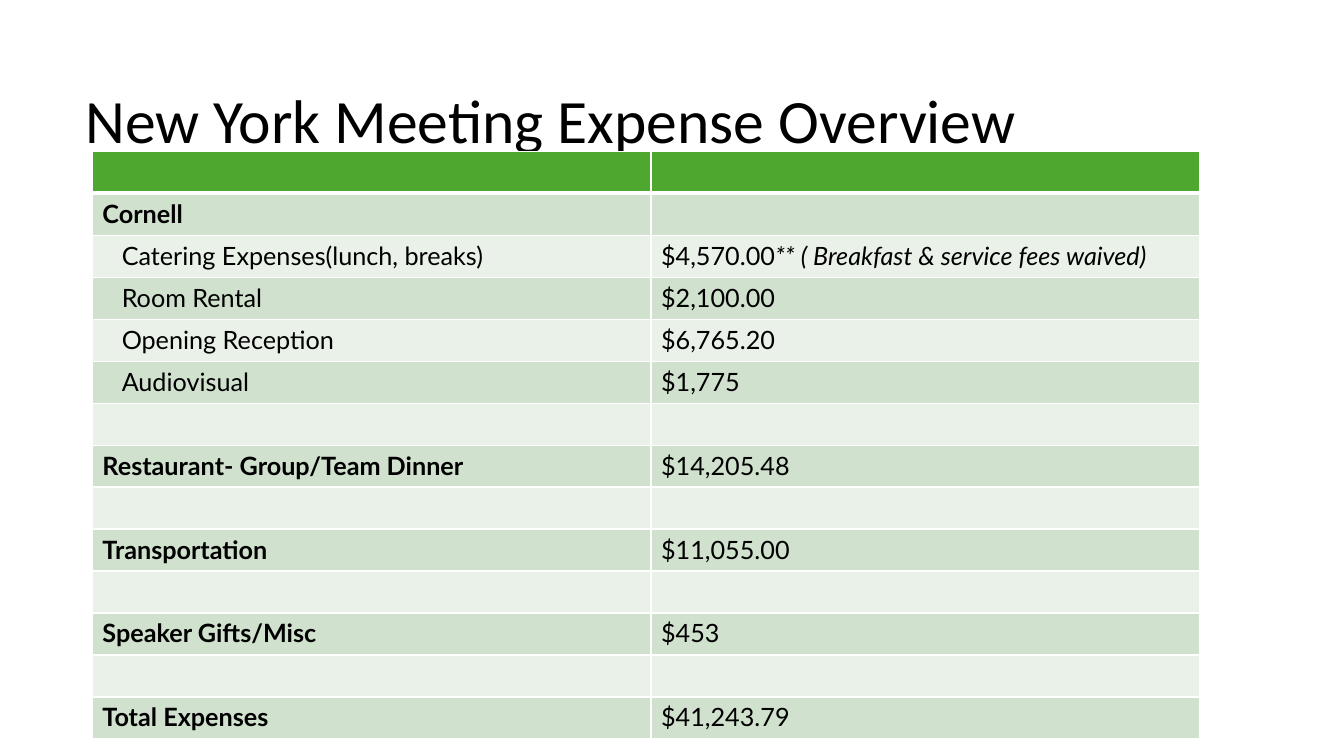
import dataclasses

import pptx
import pptx.dml.color
import pptx.enum.text
import pptx.oxml
import pptx.oxml.ns
import pptx.util

PX = 9525  # EMU in one px, 96 px to the inch


@dataclasses.dataclass(frozen=True)
class Theme:
    ink: str = "000000"
    rule: str = "FFFFFF"
    head: str = "4EA72E"
    bands: tuple = ("D0E1CD", "E9F1E8")
    title: int = 44
    body: int = 18
    title_font: str = "Calibri"
    body_font: str = "Lato"


THEME = Theme()

# Label, level (0 = bold group, 1 = indented item), amount, note
ROWS = [
    ("", 0, "", ""),
    ("Cornell", 0, "", ""),
    ("Catering Expenses(lunch, breaks)", 1, "$4,570.00",
     "** ( Breakfast & service fees waived)"),
    ("Room Rental", 1, "$2,100.00", ""),
    ("Opening Reception", 1, "$6,765.20", ""),
    ("Audiovisual", 1, "$1,775", ""),
    ("", 0, "", ""),
    ("Restaurant- Group/Team Dinner", 0, "$14,205.48", ""),
    ("", 0, "", ""),
    ("Transportation", 0, "$11,055.00", ""),
    ("", 0, "", ""),
    ("Speaker Gifts/Misc", 0, "$453", ""),
    ("", 0, "", ""),
    ("Total Expenses", 0, "$41,243.79", ""),
]


def px(num):
    return pptx.util.Emu(num * PX)


def color(code):
    return pptx.dml.color.RGBColor.from_string(code)


def add_run(para, text, size, font, bold=False, slant=False):
    run = para.add_run()
    run.text = text
    run.font.size = pptx.util.Pt(size)
    run.font.name = font
    run.font.bold = bold
    run.font.italic = slant
    run.font.color.rgb = color(THEME.ink)


def add_title(slide, text, left, top, width, height):
    box = slide.shapes.add_textbox(px(left), px(top), px(width), px(height))
    frame = box.text_frame
    frame.word_wrap = True
    frame.margin_top = px(7)
    frame.vertical_anchor = pptx.enum.text.MSO_ANCHOR.TOP
    add_run(frame.paragraphs[0], text, THEME.title, THEME.title_font)


def add_rules(cell, top, bottom):
    props = cell._tc.get_or_add_tcPr()
    space = pptx.oxml.ns.nsdecls("a")
    for side, points in (("L", 1), ("R", 1), ("T", top), ("B", bottom)):
        props.append(pptx.oxml.parse_xml(
            f'<a:ln{side} {space} w="{pptx.util.Pt(points)}"><a:solidFill>'
            f'<a:srgbClr val="{THEME.rule}"/></a:solidFill></a:ln{side}>'))


def fill_cell(cell, row, runs):
    # The rule under the header row is heavier
    add_rules(cell, 3 if row == 1 else 1, 3 if row == 0 else 1)
    cell.fill.solid()
    band = THEME.bands[(row - 1) % 2]
    cell.fill.fore_color.rgb = color(band if row else THEME.head)
    para = cell.text_frame.paragraphs[0]
    para.font.size = pptx.util.Pt(THEME.body)
    for text, bold, slant in runs:
        if text:
            add_run(para, text, THEME.body, THEME.body_font, bold, slant)


def add_costs(slide, left, top, widths, height):
    frame = slide.shapes.add_table(
        len(ROWS), len(widths), px(left), px(top),
        px(sum(widths)), px(height * len(ROWS)))
    table = frame.table
    for col, width in zip(table.columns, widths):
        col.width = px(width)
    for row, (label, level, amount, note) in enumerate(ROWS):
        table.rows[row].height = px(height)
        name, cost = table.cell(row, 0), table.cell(row, 1)
        fill_cell(name, row, [(label, level == 0, False)])
        fill_cell(cost, row, [(amount, False, False), (note, False, True)])
        if level:
            name.margin_left = px(28)


def main():
    deck = pptx.Presentation()
    deck.slide_width, deck.slide_height = px(1280), px(720)
    slide = deck.slides.add_slide(deck.slide_layouts[6])

    # Heading
    add_title(slide, "New York Meeting Expense Overview", 72, 71, 1100, 122)

    # Expense table
    add_costs(slide, 88, 144, (532, 523), 40)

    deck.save("out.pptx")


if __name__ == "__main__":
    main()
